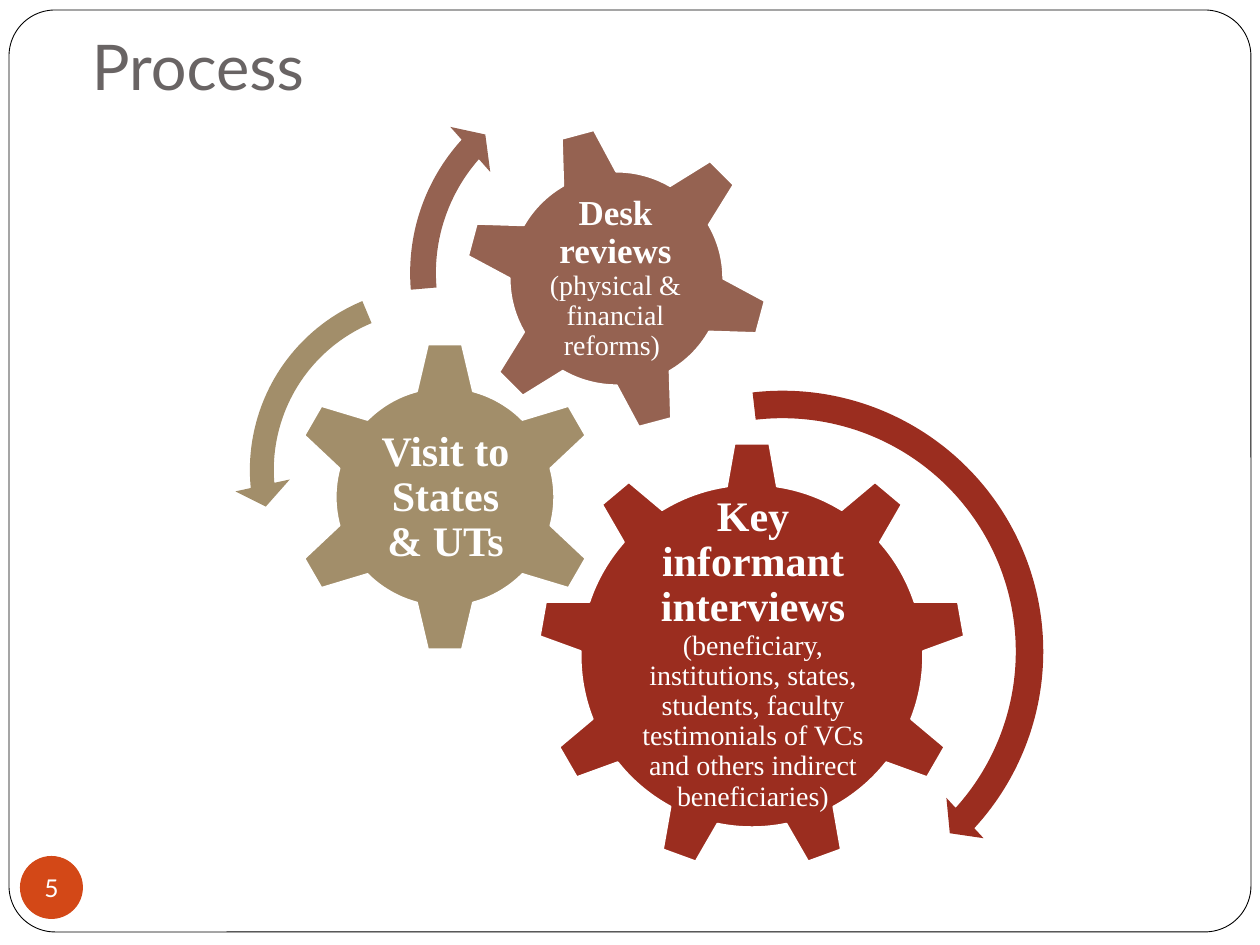
"""Build the Process slide: three interlocking gears with turning arrows."""
from pptx import Presentation
from pptx.dml.color import RGBColor
from pptx.enum.shapes import MSO_SHAPE
from pptx.enum.text import MSO_ANCHOR, PP_ALIGN
from pptx.util import Emu, Pt

FRAME, BADGE = MSO_SHAPE.ROUNDED_RECTANGLE, MSO_SHAPE.OVAL
GEAR_6, GEAR_9 = MSO_SHAPE.GEAR_6, MSO_SHAPE.GEAR_9
RIGHT_TURN, LEFT_TURN = MSO_SHAPE.CIRCULAR_ARROW, MSO_SHAPE.LEFT_CIRCULAR_ARROW
MIDDLE, BOTTOM = MSO_ANCHOR.MIDDLE, MSO_ANCHOR.BOTTOM
CENTER, LEFT = PP_ALIGN.CENTER, PP_ALIGN.LEFT

PX_PER_INCH = 126
WHITE, BLACK, GREY, ORANGE = "FFFFFF", "000000", "696464", "D34817"
RED, TAN, BROWN = "9B2D1F", "A28E6A", "956251"
SANS, SERIF = "Lato", "Times New Roman"

# shape, left, top, size, rotation, colour, label box, runs of (text, size, bold)
GEARS = [
    (GEAR_9, 538, 442, 428, 0, RED, (625, 543, 256, 221), [
        ("Key informant interviews ", 24, True),
        ("(beneficiary, institutions, states, students, faculty testimonials "
         "of VCs and others indirect beneficiaries)", 16, False)]),
    (GEAR_6, 289, 341, 312, 0, TAN, (368, 421, 155, 154), [
        ("Visit to States & UTs", 24, True)]),
    (GEAR_6, 464, 126, 305, 345, BROWN, (530, 193, 171, 171), [
        ("Desk reviews ", 20, True),
        ("(physical & financial reforms) ", 16, False)]),
]
# shape, left, top, size, colour, adjustments
ARROWS = [
    (RIGHT_TURN, 508, 377, 549, RED, (0.05, 2.99, 25.43, 158.05, 0.05)),
    (LEFT_TURN, 234, 271, 398, TAN, (0.06, 4.3, 104.89, 148.38, 0.07)),
    (RIGHT_TURN, 393, 58, 430, BROWN, (0.06, 3.94, 133.14, 105.08, 0.07)),
]


def px(length):
    return Emu(round(length * 914400 / PX_PER_INCH))


def color(value):
    return RGBColor.from_string(value)


def add_shape(page, kind, area, fill, line=None, weight=1, adjustments=()):
    shape = page.shapes.add_shape(kind, *map(px, area))
    shape.shadow.inherit = False
    shape.fill.solid()
    shape.fill.fore_color.rgb = color(fill)
    if line:
        shape.line.color.rgb = color(line)
        shape.line.width = Pt(weight)
    else:
        shape.line.fill.background()
    for index, value in enumerate(adjustments):
        shape.adjustments[index] = value
    return shape


def write(shape, runs, font, ink, margins, anchor=MIDDLE, align=CENTER, spacing=1.0, wrap=True):
    frame = shape.text_frame
    frame.word_wrap = wrap
    frame.vertical_anchor = anchor
    frame.margin_left, frame.margin_top, frame.margin_right, frame.margin_bottom = map(px, margins)
    para = frame.paragraphs[0]
    para.alignment = align
    para.line_spacing = spacing
    for text, size, bold in runs:
        span = para.add_run()
        span.text = text
        span.font.name = font
        span.font.size = Pt(size)
        span.font.bold = bold
        span.font.color.rgb = color(ink)


def add_text(page, area, *args, **options):
    write(page.shapes.add_textbox(*map(px, area)), *args, **options)


def main():
    deck = Presentation()
    deck.slide_width, deck.slide_height = px(1260), px(945)
    page = deck.slides.add_slide(deck.slide_layouts[6])

    add_shape(page, FRAME, (9, 10, 1242, 922), WHITE, BLACK, 0.5, (0.05,))
    add_text(page, (79, 21, 1071, 95), [("Process", 36, False)], SANS, GREY,
             (13, 6, 13, 13), anchor=BOTTOM, align=LEFT)

    for kind, left, top, size, rotation, fill, label_area, runs in GEARS:
        gear = add_shape(page, kind, (left, top, size, size), fill, WHITE)
        gear.rotation = rotation
        add_text(page, label_area, runs, SERIF, WHITE, (4, 4, 4, 4), spacing=0.9)

    for kind, left, top, size, fill, adjustments in ARROWS:
        add_shape(page, kind, (left, top, size, size), fill, adjustments=adjustments)

    badge = add_shape(page, BADGE, (20, 856, 63, 63), ORANGE)
    write(badge, [("5", 14, False)], SANS, WHITE, (0, 0, 0, 0), wrap=False)

    deck.save("out.pptx")


if __name__ == "__main__":
    main()
